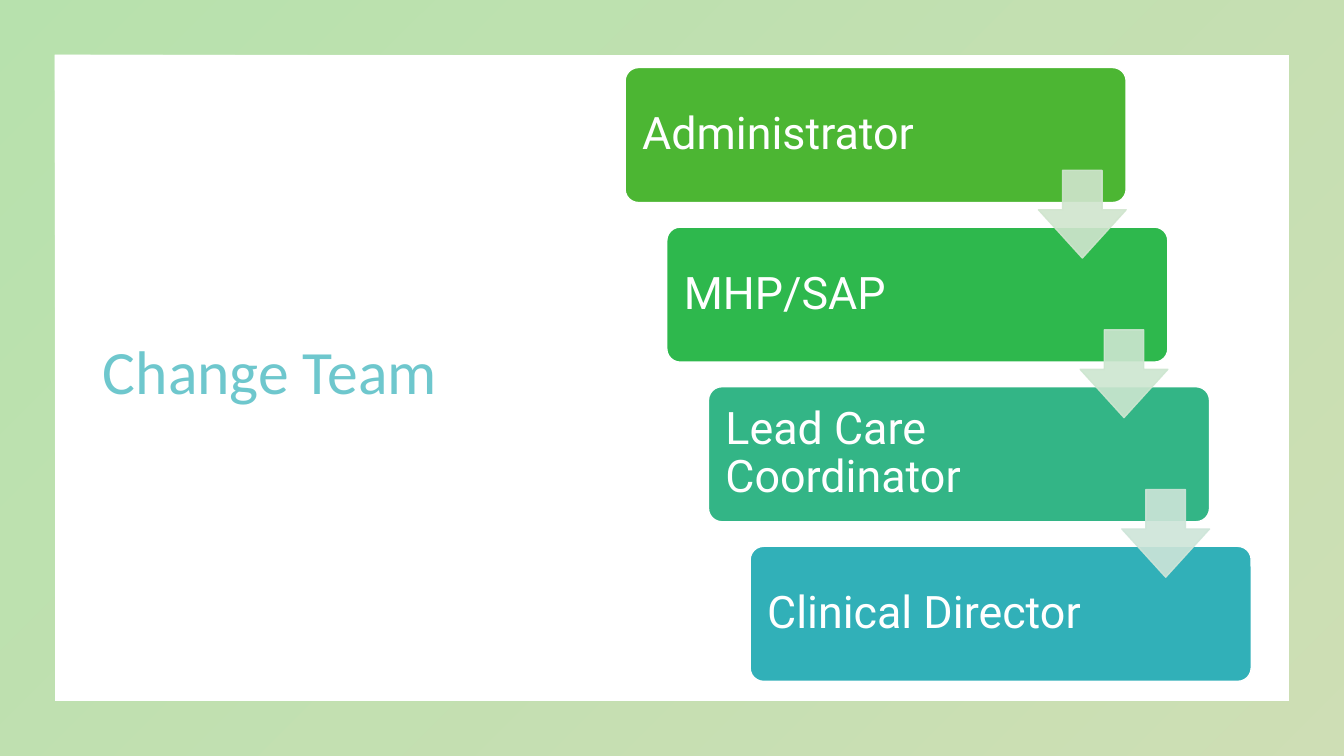
from collections import namedtuple

from lxml import etree
from pptx import Presentation
from pptx import util as u
from pptx.dml.color import RGBColor
from pptx.enum import shapes, text
from pptx.oxml import ns

WHITE = RGBColor(0xFF, 0xFF, 0xFF)
LEAF = RGBColor(0x4C, 0xB6, 0x33)
OLIVE = RGBColor(0x85, 0xAE, 0x46)
EMERALD = RGBColor(0x2E, 0xB8, 0x4D)
JADE = RGBColor(0x33, 0xB5, 0x86)
TEAL = RGBColor(0x31, 0xB0, 0xB8)
PALE_LEAF = RGBColor(0xD0, 0xE5, 0xCE)
PALE_EMERALD = RGBColor(0xCD, 0xE6, 0xD0)
PALE_JADE = RGBColor(0xCE, 0xE5, 0xD9)

ROLES = [
    ("Administrator", LEAF),
    ("MHP/SAP", EMERALD),
    ("Lead Care Coordinator", JADE),
    ("Clinical Director", TEAL),
]
ARROW_COLOURS = [PALE_LEAF, PALE_EMERALD, PALE_JADE]

Box = namedtuple("Box", "left top width height")


def inch_box(*lengths):
    """Return a box from four lengths in inches."""
    return Box(*(u.Inches(length) for length in lengths))


def set_opacity(element, percent):
    """Give every colour inside the element the same opacity."""
    for colour in element.iter(ns.qn("a:srgbClr")):
        etree.SubElement(colour, ns.qn("a:alpha"), val=str(percent * 1000))


def fill_gradient(fill, start, end, angle):
    """Apply a two-colour linear gradient."""
    fill.gradient()
    fill.gradient_angle = angle
    for stop, colour in zip(fill.gradient_stops, (start, end)):
        stop.color.rgb = colour


def write_text(frame, words, font, size, colour=WHITE, space_after=0):
    """Write one left-aligned, vertically centred paragraph and return its span."""
    frame.word_wrap = True
    frame.auto_size = text.MSO_AUTO_SIZE.NONE
    frame.vertical_anchor = text.MSO_ANCHOR.MIDDLE
    para = frame.paragraphs[0]
    para.alignment = text.PP_ALIGN.LEFT
    para.line_spacing = 0.9
    para.space_after = u.Pt(space_after)
    span = para.add_run()
    span.text = words
    span.font.name = font
    span.font.size = u.Pt(size)
    span.font.color.rgb = colour
    return span


def add_block(page, kind, box, adjustments, colour=None):
    """Add a preset shape without shadow, outlined only when it has a colour."""
    block = page.shapes.add_shape(kind, *box)
    block.shadow.inherit = False
    for index, value in enumerate(adjustments):
        block.adjustments[index] = value
    if colour is None:
        block.line.fill.background()
    else:
        block.fill.solid()
        block.fill.fore_color.rgb = colour
        block.line.color.rgb = colour
        block.line.width = u.Pt(1)
    return block


def add_border(page, box):
    """Draw the translucent gradient frame around the page."""
    border = add_block(page, shapes.MSO_SHAPE.FRAME, box, [0.072])
    fill_gradient(border.fill, LEAF, OLIVE, 315)
    set_opacity(border.fill._xPr, 40)


def add_title(page, box):
    """Place the slide title on the left."""
    title = page.shapes.title
    title.left, title.top, title.width, title.height = box
    span = write_text(title.text_frame, "Change Team", "Calibri", 44)
    fill_gradient(span.font.fill, TEAL, OLIVE, 0)
    set_opacity(span._r, 70)


def add_staircase(page, box):
    """Step the role cards down the box and link them with arrows."""
    width, height = u.Inches(4.97), u.Inches(1.34)
    arrow_size = u.Inches(0.87)
    across = (box.width - width) / (len(ROLES) - 1)
    down = (box.height - height) / (len(ROLES) - 1)
    corners = [
        (round(box.left + step * across), round(box.top + step * down))
        for step in range(len(ROLES))
    ]
    for (left, top), (role, colour) in zip(corners, ROLES):
        card = add_block(page, shapes.MSO_SHAPE.ROUNDED_RECTANGLE,
                         Box(left, top, width, height), [0.1], colour)
        card.line.color.rgb = WHITE
        frame = card.text_frame
        frame.margin_left = frame.margin_top = frame.margin_bottom = u.Inches(0.13)
        frame.margin_right = u.Inches(1.41)
        write_text(frame, role, "Roboto", 32)
    for (left, top), colour in zip(corners, ARROW_COLOURS):
        place = Box(left + width - arrow_size, top + u.Inches(1.02),
                    arrow_size, arrow_size)
        arrow = add_block(page, shapes.MSO_SHAPE.DOWN_ARROW, place,
                          [0.45, 0.55], colour)
        set_opacity(arrow.fill._xPr, 90)


def main():
    """Build and save the slide."""
    deck = Presentation()
    deck.slide_width, deck.slide_height = u.Inches(13.33), u.Inches(7.5)
    page = deck.slides.add_slide(deck.slide_layouts[5])
    add_border(page, inch_box(0, 0, 13.33, 7.5))
    add_title(page, inch_box(0.92, 0.67, 4.86, 6.09))
    add_staircase(page, inch_box(6.2, 0.67, 6.21, 6.09))
    deck.save("out.pptx")


if __name__ == "__main__":
    main()
